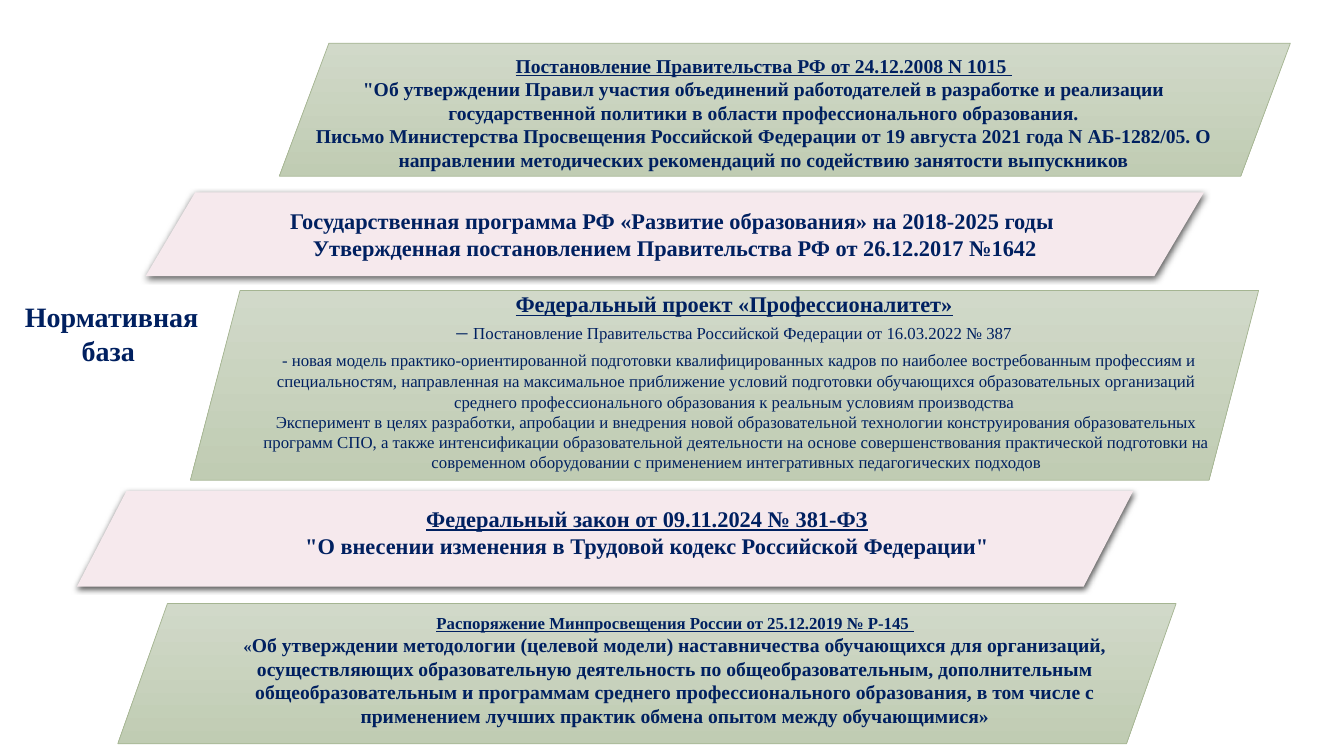
from dataclasses import dataclass, replace

from lxml.etree import SubElement
from pptx import Presentation
from pptx.dml.color import RGBColor as Rgb
from pptx.enum.text import MSO_ANCHOR as Anchor, MSO_AUTO_SIZE as AutoSize, PP_ALIGN as Align
from pptx.oxml.ns import qn
from pptx.util import Cm, Pt


@dataclass(frozen=True)
class Style:
    size: float
    bold: bool = False
    underline: bool = False
    face: str = "Times New Roman"
    color: str = "002060"


@dataclass(frozen=True)
class Theme:
    green_top: str = "D1D9C9"
    green_bottom: str = "C0CCB3"
    green_edge: str = "A5B592"
    pink: str = "F6E9ED"
    shadow: str = "000000"
    section: Style = Style(20, bold=True)
    title: Style = Style(16, bold=True)
    title_link: Style = Style(16, bold=True, underline=True)
    body: Style = Style(14, bold=True)
    body_link: Style = Style(14, bold=True, underline=True)
    small: Style = Style(12)
    small_bold: Style = Style(12, bold=True)
    small_link: Style = Style(12, bold=True, underline=True)
    dash: Style = Style(16)
    gap: Style = Style(16, face="Calibri", color="000000")


THEME = Theme()
SLANT = 1.25

# A paragraph is its style followed by runs; a run is a text or a (text, style) pair.
DECREE = [
    (THEME.body_link, "Постановление Правительства РФ от 24.12.2008 N 1015 "),
    (THEME.body, '"Об утверждении Правил участия объединений работодателей в разработке и реализации '
                 "государственной политики в области профессионального образования."),
    (THEME.body, "Письмо Министерства Просвещения Российской Федерации от 19 августа 2021 года "
                 "N АБ-1282/05. О направлении методических рекомендаций по содействию занятости выпускников"),
]
PROGRAMME = [
    (THEME.title, "Государственная программа РФ «Развитие образования» на 2018-2025 годы "),
    (THEME.title, "Утвержденная постановлением Правительства РФ от 26.12.2017 №1642"),
]
PROJECT = [
    (THEME.title_link, "Федеральный проект «Профессионалитет»", (" ", THEME.gap)),
    (THEME.small, ("– ", THEME.dash),
     "Постановление Правительства Российской Федерации от 16.03.2022 № 387 "),
    (THEME.small, (" ", replace(THEME.dash, color="000000")),
     "- новая модель практико-ориентированной подготовки квалифицированных кадров по наиболее "
     "востребованным профессиям и специальностям, направленная на максимальное приближение условий "
     "подготовки обучающихся образовательных организаций среднего профессионального образования "
     "к реальным условиям производства "),
    (THEME.small, "Эксперимент в целях разработки, апробации и внедрения новой образовательной технологии "
                  "конструирования образовательных программ СПО, а также интенсификации образовательной "
                  "деятельности на основе совершенствования практической подготовки на современном "
                  "оборудовании с применением интегративных педагогических подходов"),
]
LAW = [
    (THEME.title_link, "Федеральный закон от 09.11.2024 № 381-ФЗ"),
    (THEME.title, '"О внесении изменения в Трудовой кодекс Российской Федерации"'),
]
ORDER = [
    (THEME.small_link, "Распоряжение Минпросвещения России от 25.12.2019 № Р-145 "),
    (THEME.body, ("«", THEME.small_bold),
     "Об утверждении методологии (целевой модели) наставничества обучающихся для организаций, "
     "осуществляющих образовательную деятельность по общеобразовательным, дополнительным "
     "общеобразовательным и программам среднего профессионального образования, в том числе с "
     "применением лучших практик обмена опытом между обучающимися»"),
]
SECTION = [(THEME.section, "Нормативная база ")]


def apply_style(font, style):
    font.name, font.size = style.face, Pt(style.size)
    font.bold, font.underline = style.bold, style.underline
    font.color.rgb = Rgb.from_string(style.color)


def write(frame, paragraphs, inset_x=0, inset_y=0):
    frame.word_wrap = True
    frame.margin_left = frame.margin_right = Cm(inset_x)
    frame.margin_top = frame.margin_bottom = Cm(inset_y)
    for index, (style, *runs) in enumerate(paragraphs):
        paragraph = frame.add_paragraph() if index else frame.paragraphs[0]
        paragraph.alignment = Align.CENTER
        apply_style(paragraph.font, style)
        for entry in runs:
            run = paragraph.add_run()
            if isinstance(entry, str):
                run.text = entry
            else:
                run.text = entry[0]
                apply_style(run.font, entry[1])


def add_text(slide, box, paragraphs, **insets):
    frame = slide.shapes.add_textbox(*map(Cm, box)).text_frame
    write(frame, paragraphs, **insets)
    frame.auto_size = AutoSize.SHAPE_TO_FIT_TEXT


def add_slanted(slide, box):
    """Outline a band whose top edge is shifted right by SLANT."""
    left, top, width, height = box
    right, bottom = left + width, top + height
    outline = slide.shapes.build_freeform(Cm(left + SLANT), Cm(top))
    outline.add_line_segments([(Cm(right), Cm(top)), (Cm(right - SLANT), Cm(bottom)),
                               (Cm(left), Cm(bottom))], close=True)
    band = outline.convert_to_shape()
    band.shadow.inherit = False
    return band


def add_green_band(slide, box, text_box, paragraphs, **insets):
    """text_box is measured from the band's top left corner."""
    band = add_slanted(slide, box)
    band.fill.gradient()
    band.fill.gradient_angle = 270
    for stop, color in zip(band.fill.gradient_stops, (THEME.green_top, THEME.green_bottom)):
        stop.color.rgb = Rgb.from_string(color)
    band.line.color.rgb = Rgb.from_string(THEME.green_edge)
    band.line.width = Pt(0.5)
    dx, dy, width, height = text_box
    add_text(slide, (box[0] + dx, box[1] + dy, width, height), paragraphs, **insets)


def add_pink_band(slide, box):
    band = add_slanted(slide, box)
    band.fill.solid()
    band.fill.fore_color.rgb = Rgb.from_string(THEME.pink)
    band.line.fill.background()
    effects = band._element.spPr.find(qn("a:effectLst"))
    shadow = SubElement(effects, qn("a:outerShdw"), blurRad=str(Pt(4.5)), dist=str(Pt(1.5)),
                        dir="5400000", rotWithShape="0")
    color = SubElement(shadow, qn("a:srgbClr"), val=THEME.shadow)
    SubElement(color, qn("a:alpha"), val="63000")
    return band


def add_legal_basis(slide):
    add_green_band(slide, (7.04, 1.09, 25.48, 3.35), (0.71, 0.26, 23, 3), DECREE)

    programme = add_pink_band(slide, (3.67, 4.85, 26.67, 2.11))
    write(programme.text_frame, PROGRAMME, inset_x=0.38, inset_y=0.2)
    programme.text_frame.vertical_anchor = Anchor.MIDDLE

    add_green_band(slide, (4.8, 7.32, 26.92, 4.78), (1.52, 0, 24.49, 4.62), PROJECT)

    add_pink_band(slide, (1.94, 12.37, 26.62, 2.41))
    add_text(slide, (4.06, 12.73, 24.49, 1.37), LAW)

    add_green_band(slide, (2.97, 15.21, 26.67, 3.53), (2.69, 0.11, 22.71, 3.33), ORDER,
                   inset_x=0.25, inset_y=0.13)

    add_text(slide, (0.29, 7.43, 5.05, 2.24), SECTION, inset_x=0.25, inset_y=0.13)


def main():
    deck = Presentation()
    deck.slide_width, deck.slide_height = Cm(33.87), Cm(19.05)
    add_legal_basis(deck.slides.add_slide(deck.slide_layouts[6]))
    deck.save("out.pptx")


if __name__ == "__main__":
    main()
